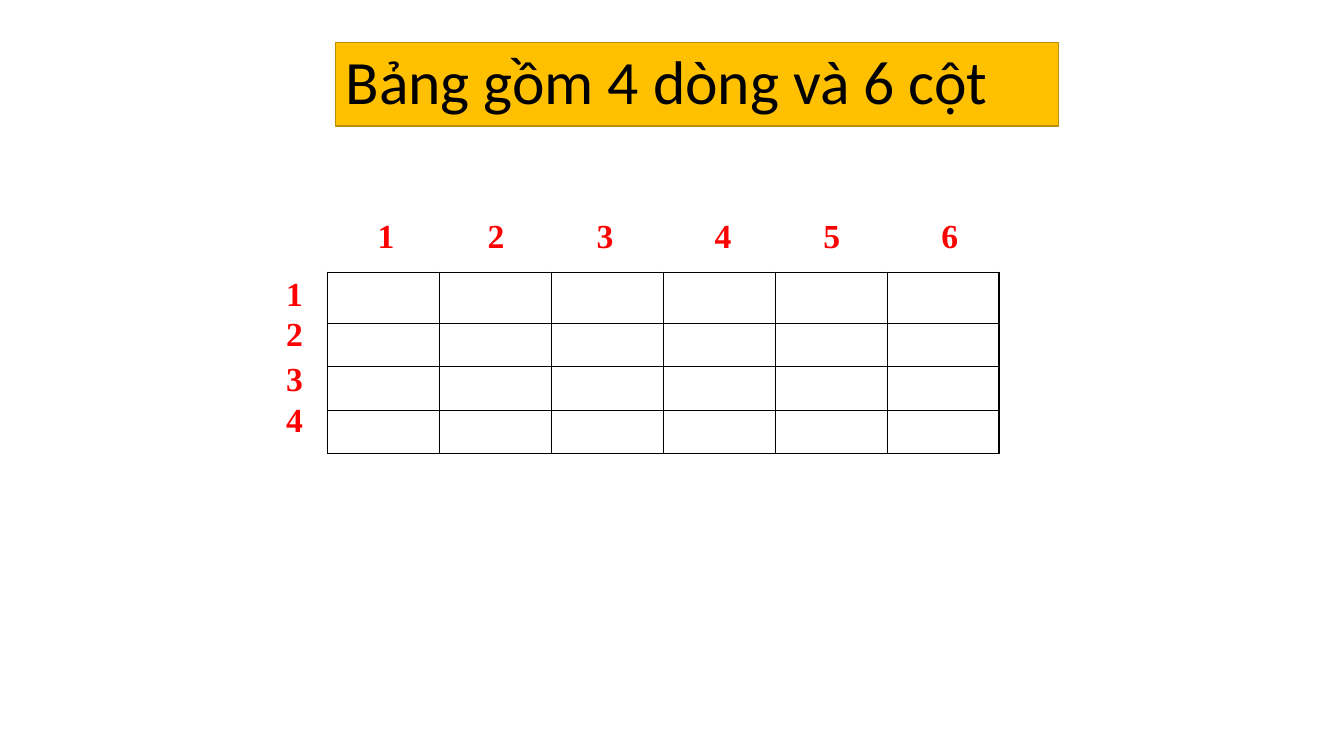
from dataclasses import dataclass

from lxml import etree
from pptx import Presentation
from pptx.dml.color import RGBColor
from pptx.enum.shapes import MSO_SHAPE
from pptx.enum.text import MSO_ANCHOR, MSO_AUTO_SIZE, PP_ALIGN
from pptx.oxml.ns import qn
from pptx.util import Inches, Pt

RECT = MSO_SHAPE.RECTANGLE
MIDDLE = MSO_ANCHOR.MIDDLE
LEFT, CENTER = PP_ALIGN.LEFT, PP_ALIGN.CENTER
GROW = MSO_AUTO_SIZE.SHAPE_TO_FIT_TEXT


@dataclass(frozen=True)
class Theme:
    banner: str = "FFC000"
    banner_line: str = "BD8E00"
    ink: str = "000000"
    label: str = "FF0000"
    title_font: str = "Calibri"
    label_font: str = "Times New Roman"
    title_size: int = 44
    label_size: int = 24
    line_width: int = 1


def write(tf, text, *, font, size, color, bold=False, align=LEFT, spacing=1.0):
    p = tf.paragraphs[0]
    p.alignment = align
    p.line_spacing = spacing
    r = p.add_run()
    r.text = text
    r.font.name = font
    r.font.size = Pt(size)
    r.font.bold = bold
    r.font.color.rgb = RGBColor.from_string(color)


class SlideBuilder:
    def __init__(self, slide, theme):
        self.s = slide
        self.theme = theme

    def banner(self, text, x, y, w, h):
        t = self.theme
        sp = self.s.shapes.add_shape(RECT, Inches(x), Inches(y), Inches(w), Inches(h))
        sp.shadow.inherit = False
        sp.fill.solid()
        sp.fill.fore_color.rgb = RGBColor.from_string(t.banner)
        sp.line.color.rgb = RGBColor.from_string(t.banner_line)
        sp.line.width = Pt(t.line_width)
        tf = sp.text_frame
        tf.word_wrap = True
        tf.vertical_anchor = MIDDLE
        write(tf, text, font=t.title_font, size=t.title_size, color=t.ink, spacing=0.9)

    def label(self, text, x, y, side=0.5):
        t = self.theme
        sp = self.s.shapes.add_textbox(Inches(x), Inches(y), Inches(side), Inches(side))
        tf = sp.text_frame
        tf.word_wrap = True
        tf.auto_size = GROW
        write(tf, text, font=t.label_font, size=t.label_size, color=t.label,
              bold=True, align=CENTER)

    def grid(self, x, y, col_widths, row_heights):
        frame = self.s.shapes.add_table(
            len(row_heights), len(col_widths), Inches(x), Inches(y),
            Inches(sum(col_widths)), Inches(sum(row_heights)))
        table = frame.table
        table.first_row = table.horz_banding = False
        for col, width in zip(table.columns, col_widths):
            col.width = Inches(width)
        for row, height in zip(table.rows, row_heights):
            row.height = Inches(height)
        for cell in table.iter_cells():
            self.cell_borders(cell)
            cell.fill.background()

    def cell_borders(self, cell):
        tc_pr = cell._tc.get_or_add_tcPr()
        for side in ("a:lnL", "a:lnR", "a:lnT", "a:lnB"):
            ln = etree.SubElement(tc_pr, qn(side), w=str(Pt(self.theme.line_width)))
            fill = etree.SubElement(ln, qn("a:solidFill"))
            etree.SubElement(fill, qn("a:srgbClr"), val=self.theme.ink)


def main():
    prs = Presentation()
    prs.slide_width, prs.slide_height = Inches(13.33), Inches(7.5)
    s = prs.slides.add_slide(prs.slide_layouts[6])
    page = SlideBuilder(s, Theme())

    # Empty table: 4 rows by 6 columns
    page.grid(3.25, 2.7, [1.11] * 6, [0.51] + [0.43] * 3)

    # Title banner
    page.banner("Bảng gồm 4 dòng và 6 cột", 3.33, 0.42, 7.17, 0.83)

    # Row numbers
    for number, y in enumerate((2.66, 3.06, 3.5, 3.91), start=1):
        page.label(str(number), 2.67, y)

    # Column numbers
    for number, x in enumerate((3.58, 4.67, 5.75, 6.92, 8, 9.17), start=1):
        page.label(str(number), x, 2.08)

    prs.save("out.pptx")


if __name__ == "__main__":
    main()
